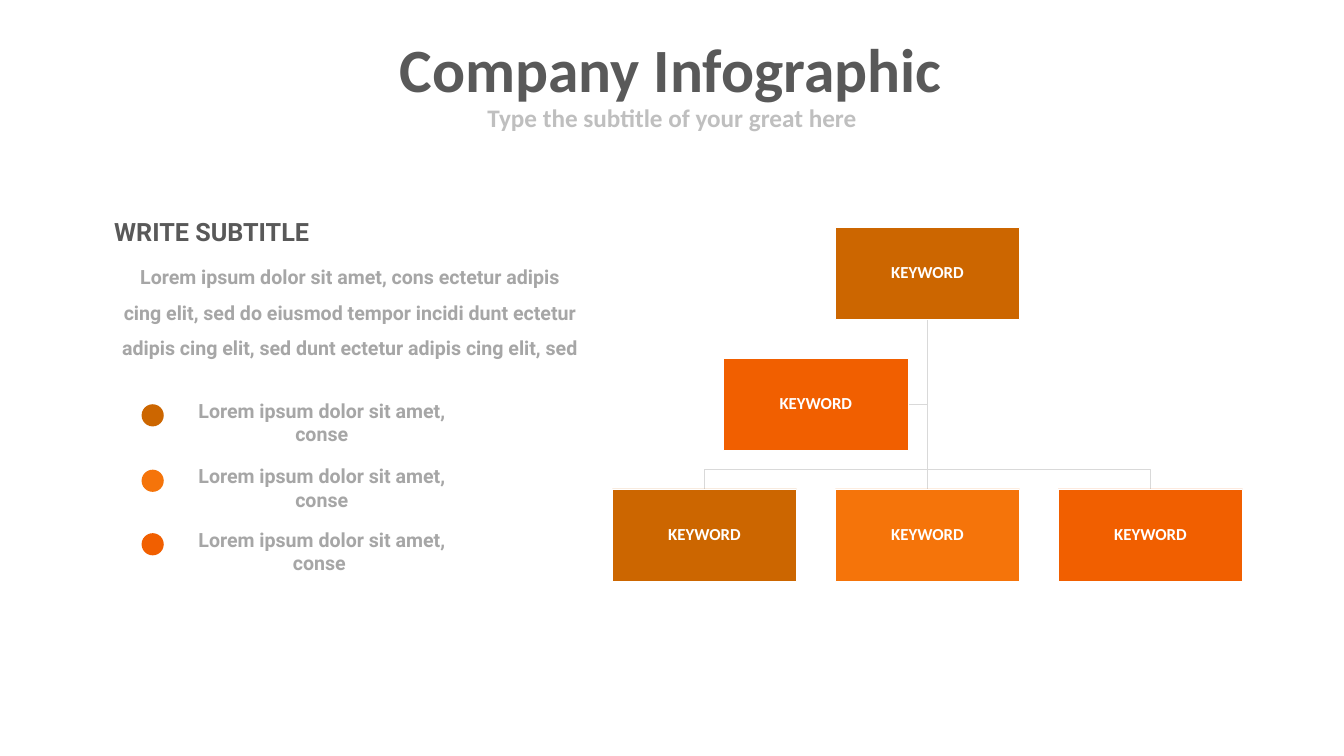
from dataclasses import dataclass
from pptx import Presentation
from pptx.dml.color import RGBColor
from pptx.enum.shapes import MSO_CONNECTOR, MSO_SHAPE
from pptx.enum.text import MSO_ANCHOR, PP_ALIGN
from pptx.oxml.ns import qn
from pptx.util import Pt
from lxml.etree import SubElement


@dataclass(frozen=True)
class Theme:
    brown: str = "CC6600"
    amber: str = "F5740A"
    orange: str = "F15F00"
    white: str = "FFFFFF"
    dark: str = "595959"
    gray: str = "A6A6A6"
    pale: str = "BFBFBF"
    rule: str = "D9D9D9"
    head: str = "Calibri"
    body: str = "Roboto"
    title: float = 87.9
    sub: float = 36
    text: float = 28
    key: float = 24


T = Theme()
BOX_W, BOX_H = 263.5, 131.8


def color(code):
    return RGBColor.from_string(code)


def write(frame, words, font, size, tone, space=1.0):
    para = frame.paragraphs[0]
    para.alignment = PP_ALIGN.CENTER
    para.line_spacing = space
    run = para.add_run()
    run.text = words
    run.font.name = font
    run.font.size = Pt(size)
    run.font.bold = True
    run.font.color.rgb = color(tone)


def add_text(slide, area, words, font, size, tone, space=1.0, wrap=True):
    box = slide.shapes.add_textbox(*map(Pt, area))
    box.text_frame.word_wrap = wrap
    write(box.text_frame, words, font, size, tone, space)


def add_form(slide, kind, area, fill):
    form = slide.shapes.add_shape(kind, *map(Pt, area))
    form.shadow.inherit = False
    form.fill.solid()
    form.fill.fore_color.rgb = color(fill)
    form.line.fill.background()
    return form


def add_box(slide, left, top, fill):
    box = add_form(slide, MSO_SHAPE.RECTANGLE, (left, top, BOX_W, BOX_H), fill)
    box.line.color.rgb = color(T.white)
    box.line.width = Pt(1)
    frame = box.text_frame
    frame.word_wrap = True
    frame.vertical_anchor = MSO_ANCHOR.MIDDLE
    frame.margin_left = frame.margin_right = Pt(1.5)
    frame.margin_top = frame.margin_bottom = Pt(1.5)
    write(frame, "KEYWORD", T.head, T.key, T.white, 0.9)


def style_line(item):
    item.line.color.rgb = color(T.rule)
    item.line.width = Pt(1)


def add_bend(slide, points):
    first, *rest = [(Pt(x), Pt(y)) for x, y in points]
    pen = slide.shapes.build_freeform(*first)
    pen.add_line_segments(rest, close=False)
    bend = pen.convert_to_shape()
    bend.shadow.inherit = False
    bend.fill.background()
    style_line(bend)


def add_trunk(slide, x, top, end):
    trunk = slide.shapes.add_connector(
        MSO_CONNECTOR.STRAIGHT, Pt(x), Pt(top), Pt(x), Pt(end))
    style_line(trunk)
    SubElement(trunk._element.spPr, qn("a:effectLst"))


def add_chart(slide):
    left, top, step, drop = 874.8, 324.7, 318.6, 186.85
    cols = [left + step * i for i in range(3)]
    rows = [top + drop * i for i in range(3)]
    mid = cols[1] + BOX_W / 2
    start = top + BOX_H
    fork = rows[2] - 27.5
    aide = 1033.9

    # Links, behind the boxes
    side = rows[1] + BOX_H / 2
    add_bend(slide, [(mid, start), (mid, side), (aide + BOX_W, side)])
    for col in (cols[2], cols[0]):
        end = col + BOX_W / 2
        add_bend(slide, [(mid, start), (mid, fork), (end, fork), (end, rows[2])])
    add_trunk(slide, mid, start, rows[2])

    # Boxes: head, bottom row, aide
    add_box(slide, cols[1], rows[0], T.brown)
    for col, fill in zip(cols, (T.brown, T.amber, T.orange)):
        add_box(slide, col, rows[2], fill)
    add_box(slide, aide, rows[1], T.orange)


def add_list(slide):
    short = "Lorem ipsum dolor sit amet, conse"
    items = ((566, T.brown, short), (659.5, T.amber, short),
             (750.2, T.orange, short + " "))
    for top, fill, words in items:
        add_form(slide, MSO_SHAPE.OVAL, (202.3, top + 11.5, 31.7, 31.7), fill)
        add_text(slide, (244.8, top, 429.8, 74.9), words, T.body, T.text, T.gray)


def main():
    deck = Presentation()
    deck.slide_width, deck.slide_height = Pt(1920.24), Pt(1080)
    slide = deck.slides.add_slide(deck.slide_layouts[6])

    # Heading
    add_text(slide, (81.4, 52.6, 1754.6, 103.7), "Company Infographic",
             T.head, T.title, T.dark, 0.9)
    add_text(slide, (82.8, 147.6, 1754.6, 77), "Type the subtitle of your great here",
             T.head, T.sub, T.pale, 0.9)

    # Left column
    add_text(slide, (142.6, 305.3, 319.7, 51.1), "WRITE SUBTITLE",
             T.body, T.sub, T.dark, wrap=False)
    add_text(slide, (165.6, 358.6, 668.2, 204.5),
             "Lorem ipsum dolor sit amet, cons ectetur adipis cing elit, "
             "sed do eiusmod tempor incidi dunt ectetur adipis cing elit, "
             "sed dunt ectetur adipis cing elit, sed",
             T.body, T.text, T.gray, 1.5)
    add_list(slide)

    # Organisation tree
    add_chart(slide)
    deck.save("out.pptx")


if __name__ == "__main__":
    main()
